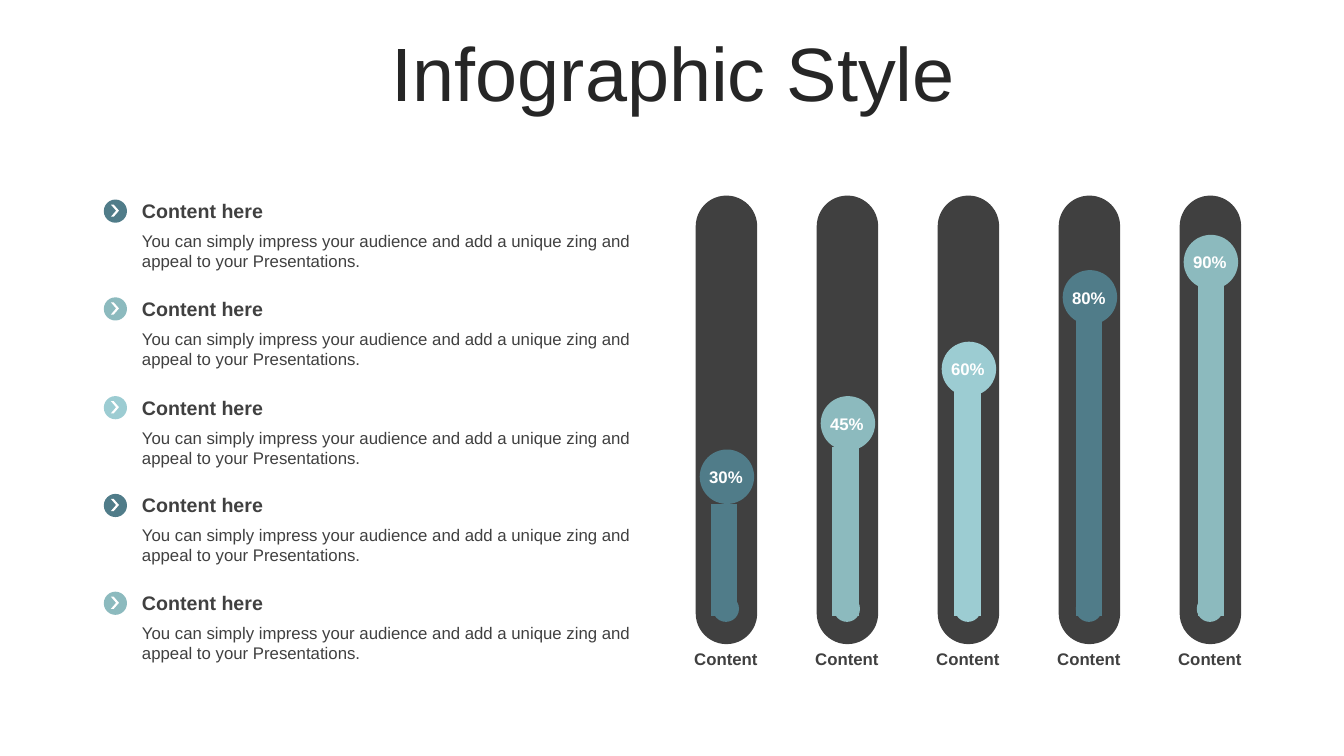
from lxml import etree
from pptx import Presentation
from pptx import util as u
from pptx.chart.data import CategoryChartData
from pptx.dml.color import RGBColor
from pptx.enum import chart as charts, shapes, text
from pptx.oxml.ns import qn

PX = 9144
FONT = "Arial"
DARK, WHITE = "404040", "FFFFFF"
TEAL, SAGE, AQUA = "507C89", "8CBABE", "9CCCD2"
COLORS = [TEAL, SAGE, AQUA, TEAL, SAGE]
PERCENTS = [30, 45, 60, 80, 90]
HEADING = "Content here"
BODY = ("You can simply impress your audience and add a unique zing "
        "and appeal to your Presentations.")
OVAL = shapes.MSO_SHAPE.OVAL
LEFT, CENTER = text.PP_ALIGN.LEFT, text.PP_ALIGN.CENTER
TOP, MIDDLE = text.MSO_ANCHOR.TOP, text.MSO_ANCHOR.MIDDLE


def emu(*lengths):
    """Turn pixel lengths into EMU."""
    return [u.Emu(length * PX) for length in lengths]


def paint(fill, color):
    """Give a fill one solid hex colour."""
    fill.solid()
    fill.fore_color.rgb = RGBColor.from_string(color)


def add_form(parent, preset, box, color, adjustment=None):
    """Add a filled preset shape without line or shadow."""
    shape = parent.shapes.add_shape(preset, *emu(*box))
    shape.shadow.inherit = False
    paint(shape.fill, color)
    shape.line.fill.background()
    if adjustment is not None:
        shape.adjustments[0] = adjustment
    return shape


def add_label(parent, words, box, size, color=DARK, bold=False,
              align=CENTER, anchor=MIDDLE, wrap=True):
    """Add a text box holding one run."""
    frame = parent.shapes.add_textbox(*emu(*box)).text_frame
    frame.word_wrap = wrap
    frame.vertical_anchor = anchor
    paragraph = frame.paragraphs[0]
    paragraph.alignment = align
    run = paragraph.add_run()
    run.text = words
    run.font.name, run.font.size, run.font.bold = FONT, u.Pt(size), bold
    paint(run.font.fill, color)
    return paragraph


def set_plot_layout(chart, **fractions):
    """Pin the inner plot area to fractions of the chart frame."""
    plot_area = chart._chartSpace.chart.plotArea
    for layout in plot_area.findall(qn("c:layout")):
        plot_area.remove(layout)
    layout = etree.Element(qn("c:layout"))
    manual = etree.SubElement(layout, qn("c:manualLayout"))
    settings = {"layoutTarget": "inner", "xMode": "edge", "yMode": "edge", **fractions}
    for name, value in settings.items():
        etree.SubElement(manual, qn("c:" + name)).set("val", str(value))
    plot_area.insert(0, layout)


def add_bars(slide):
    """Add the column chart that forms the stems of the gauges."""
    data = CategoryChartData()
    data.categories = [str(number + 1) for number in range(len(PERCENTS))]
    data.add_series("Series 1", [round(percent / 0.9) for percent in PERCENTS])
    chart = slide.shapes.add_chart(
        charts.XL_CHART_TYPE.COLUMN_STACKED, *emu(645, 233, 629, 386), data).chart
    chart.has_legend = chart.has_title = False
    chart.font.name, chart.font.size = FONT, u.Pt(18)
    paint(chart.font.fill, "000000")
    chart.category_axis.visible = chart.value_axis.visible = False
    chart.value_axis.has_major_gridlines = False
    chart.value_axis.minimum_scale, chart.value_axis.maximum_scale = 0, 100
    plot = chart.plots[0]
    plot.gap_width, plot.overlap, plot.vary_by_categories = 360, 100, False
    series = plot.series[0]
    paint(series.format.fill, "F5679D")
    for index, color in enumerate(COLORS):
        paint(series.points[index].format.fill, color)
    set_plot_layout(chart, x=0.02, y=0.11, w=0.96, h=0.87)


def add_gauge_ends(slide, left, percent, color):
    """Add the foot, the percentage ball and the caption of one gauge."""
    ball_top = round(552.4 - 3.55 * percent)
    add_form(slide, OVAL, (left + 17, 591, 26, 26), color)
    add_form(slide, OVAL, (left + 4, ball_top, 54, 54), color)
    add_label(slide, f"{percent}%", (left + 2, ball_top + 12, 56, 30), 12,
              WHITE, bold=True, wrap=False)
    add_label(slide, "Content", (left - 13, 639, 86, 30), 12, bold=True)


def add_item(slide, top, color):
    """Add one list item: round chevron marker, heading and body."""
    marker = slide.shapes.add_group_shape()
    add_form(marker, OVAL, (103, top, 23, 23), color)
    add_form(marker, shapes.MSO_SHAPE.CHEVRON, (110, top + 5, 8, 12), WHITE, 0.65)
    wording = slide.shapes.add_group_shape()
    add_label(wording, HEADING, (131, top - 6, 518, 34), 14, bold=True, align=LEFT)
    add_label(wording, BODY, (131, top + 26, 518, 50), 12, align=LEFT, anchor=TOP)


def main():
    """Build and save the slide."""
    presentation = Presentation()
    presentation.slide_width, presentation.slide_height = emu(1333, 750)
    slide = presentation.slides.add_slide(presentation.slide_layouts[6])
    title = add_label(slide, "Infographic Style", (35, 37, 1266, 79), 54, "262626")
    title.line_spacing = 0.9
    lefts = [690 + 120 * column for column in range(len(PERCENTS))]
    for left in lefts:
        add_form(slide, shapes.MSO_SHAPE.ROUNDED_RECTANGLE,
                 (left, 194, 61, 445), DARK, 0.5)
    add_bars(slide)
    for left, percent, color in zip(lefts, PERCENTS, COLORS):
        add_gauge_ends(slide, left, percent, color)
    for row, color in enumerate(COLORS):
        add_item(slide, round(198 + 97.3 * row), color)
    presentation.save("out.pptx")


if __name__ == "__main__":
    main()
